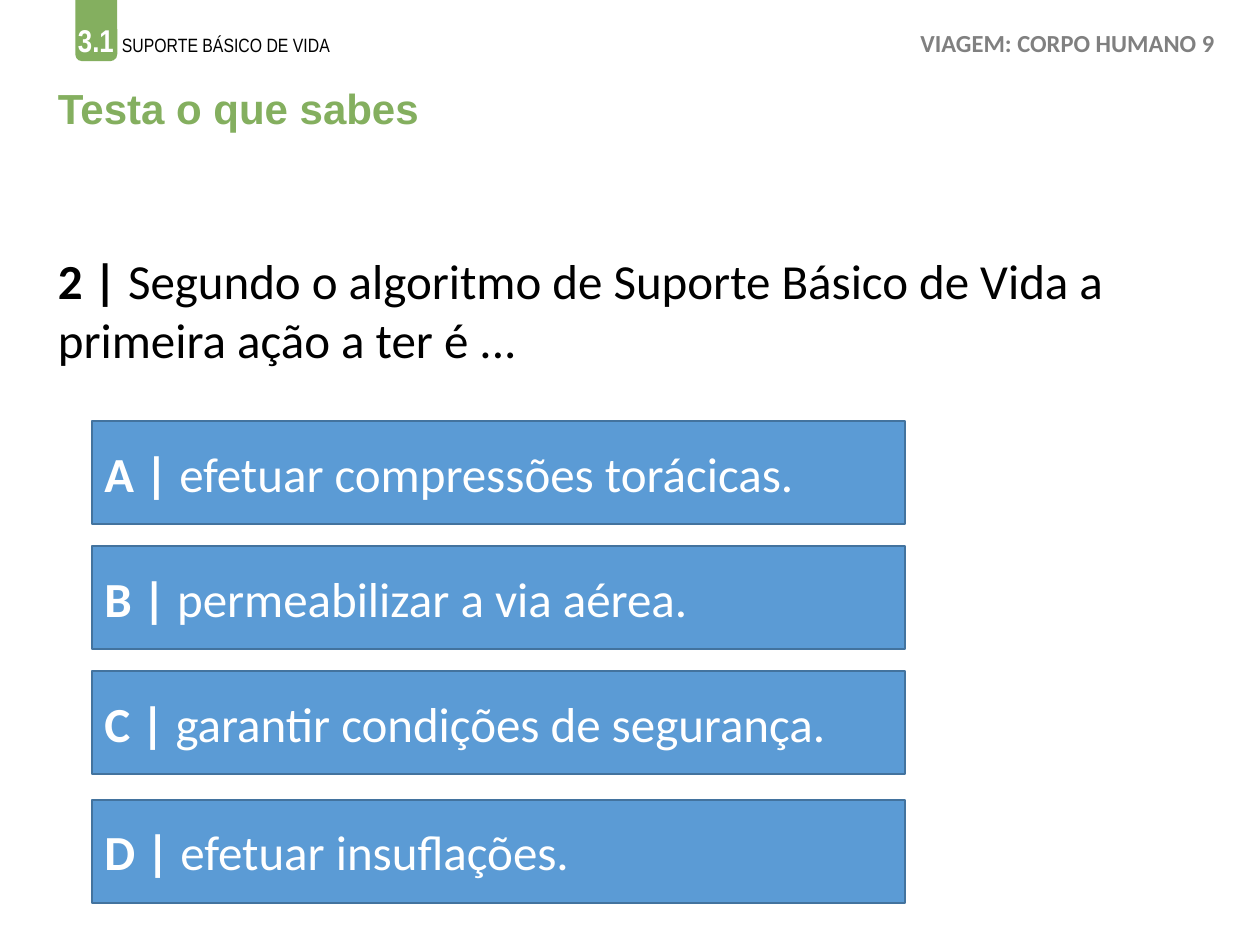
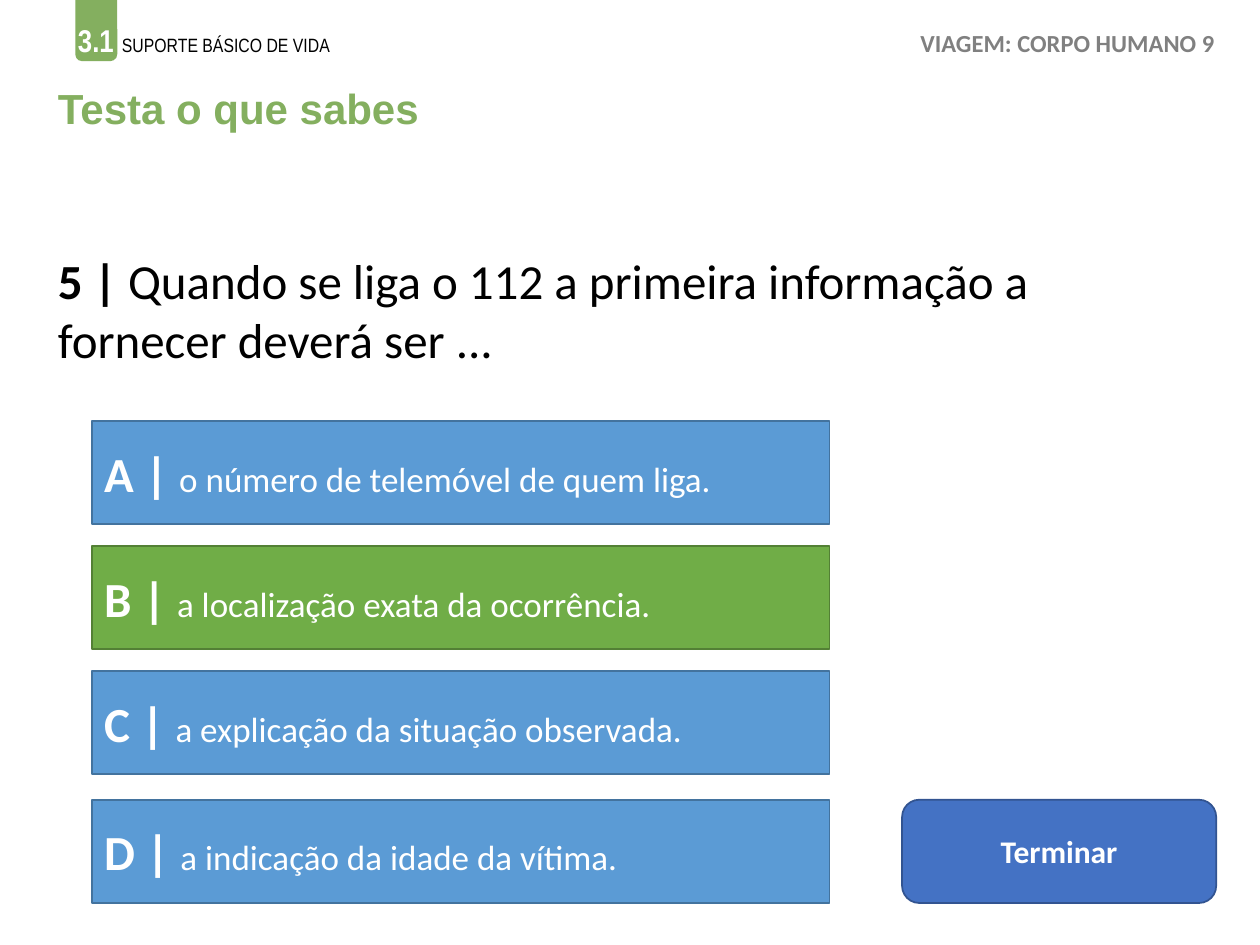
from dataclasses import dataclass

from pptx import Presentation
from pptx.dml.color import RGBColor
from pptx.enum.shapes import MSO_SHAPE
from pptx.enum.text import MSO_ANCHOR, PP_ALIGN
from pptx.util import Pt


@dataclass(frozen=True)
class Theme:
    accent: str = "84AF5F"
    spacer: str = "AFC439"
    grey: str = "808080"
    black: str = "000000"
    white: str = "FFFFFF"
    # Fill and line of each kind of box
    option: tuple = ("5B9BD5", "43739E")
    correct: tuple = ("70AD47", "538035")
    button: tuple = ("4472C4", "325491")
    body_font: str = "Calibri"
    title_font: str = "Arial"
    chapter_font: str = "Arial Narrow"
    question_size: int = 28
    title_size: int = 24
    small_answer_size: int = 20
    chapter_gap_size: int = 20
    number_size: int = 18
    button_size: int = 18
    book_size: int = 14
    chapter_size: int = 11


theme = Theme()


def add_box(slide, box, kind=None, fill=None, line=None):
    """Add a preset shape, or a text box when no kind is given."""
    lengths = [Pt(value) for value in box]
    if kind is None:
        shape = slide.shapes.add_textbox(*lengths)
    else:
        shape = slide.shapes.add_shape(kind, *lengths)
        shape.shadow.inherit = False
        shape.fill.solid()
        shape.fill.fore_color.rgb = RGBColor.from_string(fill)
        if line:
            shape.line.color.rgb = RGBColor.from_string(line)
            shape.line.width = Pt(1)
        else:
            shape.line.fill.background()
        shape.text_frame.vertical_anchor = MSO_ANCHOR.MIDDLE
    shape.text_frame.word_wrap = True
    return shape


def write(shape, runs, align=PP_ALIGN.LEFT):
    """Fill the first paragraph with runs of (text, font, size, colour, bold)."""
    paragraph = shape.text_frame.paragraphs[0]
    paragraph.alignment = align
    for text, name, size, colour, bold in runs:
        run = paragraph.add_run()
        run.text = text
        for attribute, value in {"name": name, "size": Pt(size), "bold": bold}.items():
            setattr(run.font, attribute, value)
        run.font.color.rgb = RGBColor.from_string(colour)
    return paragraph


questions = [
    {
        "number": 2,
        "text": "Segundo o algoritmo de Suporte Básico de Vida a primeira ação a ter é ...",
        "answers": [
            "efetuar compressões torácicas.",
            "permeabilizar a via aérea.",
            "garantir condições de segurança.",
            "efetuar insuflações.",
        ],
        "answer_size": theme.question_size,
        "answer_width": 464.5,
        "correct": None,
        "button": None,
    },
    {
        "number": 5,
        "text": "Quando se liga o 112 a primeira informação a fornecer deverá ser ...",
        "answers": [
            "o número de telemóvel de quem liga.",
            "a localização exata da ocorrência.",
            "a explicação da situação observada.",
            "a indicação da idade da vítima.",
        ],
        "answer_size": theme.small_answer_size,
        "answer_width": 421.5,
        "correct": "B",
        "button": "Terminar",
    },
]
answer_left, answer_height = 52.5, 59
answer_tops = (240.5, 312, 383.5, 457)

presentation = Presentation()
presentation.slide_width, presentation.slide_height = Pt(720), Pt(540)

for question in questions:
    slide = presentation.slides.add_slide(presentation.slide_layouts[6])

    # Header shared by all slides
    add_box(slide, (43, -9.5, 24, 44.5), MSO_SHAPE.ROUNDED_RECTANGLE, theme.accent)
    chapter = add_box(slide, (37.5, 6.5, 515, 31.5))
    write(chapter, [
        ("3.1", theme.chapter_font, theme.number_size, theme.white, True),
        (" ", theme.chapter_font, theme.chapter_gap_size, theme.spacer, True),
        ("SUPORTE BÁSICO DE VIDA", theme.chapter_font, theme.chapter_size, theme.black, False),
    ])
    book = add_box(slide, (517, 12.5, 186, 24.5))
    write(book, [("VIAGEM: CORPO HUMANO 9", theme.body_font, theme.book_size, theme.grey, True)],
          PP_ALIGN.CENTER)
    title = add_box(slide, (26, 41, 669, 44.5))
    title.text_frame.vertical_anchor = MSO_ANCHOR.MIDDLE
    paragraph = write(title, [
        ("Testa o que sabes", theme.title_font, theme.title_size, theme.accent, True),
    ])
    for attribute, value in {"line_spacing": 0.9, "space_before": Pt(10)}.items():
        setattr(paragraph, attribute, value)

    prompt = add_box(slide, (26, 139.5, 669, 75))
    write(prompt, [
        (f"{question['number']} |", theme.body_font, theme.question_size, theme.black, True),
        (f" {question['text']}", theme.body_font, theme.question_size, theme.black, False),
    ])

    for letter, top, answer in zip("ABCD", answer_tops, question["answers"]):
        colours = theme.correct if letter == question["correct"] else theme.option
        option = add_box(slide, (answer_left, top, question["answer_width"], answer_height),
                         MSO_SHAPE.RECTANGLE, *colours)
        write(option, [
            (f"{letter} | ", theme.body_font, theme.question_size, theme.white, True),
            (answer, theme.body_font, question["answer_size"], theme.white, False),
        ])

    if question["button"]:
        button = add_box(slide, (515.5, answer_tops[-1], 179.5, answer_height),
                         MSO_SHAPE.ROUNDED_RECTANGLE, *theme.button)
        write(button, [
            (question["button"], theme.body_font, theme.button_size, theme.white, True),
        ], PP_ALIGN.CENTER)

presentation.save("out.pptx")
